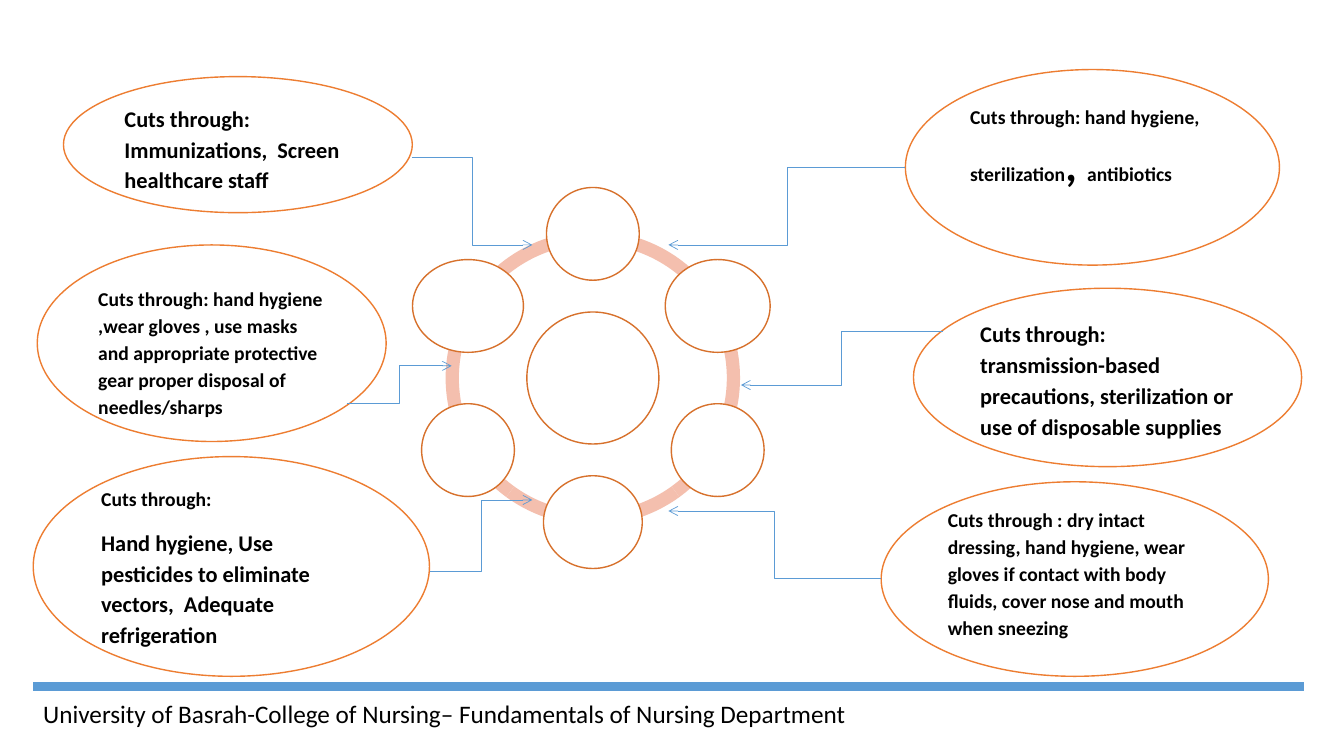
from math import cos, radians, sin

from lxml.etree import SubElement
from pptx import Presentation
from pptx.dml.color import RGBColor
from pptx.enum.shapes import MSO_CONNECTOR, MSO_SHAPE
from pptx.enum.text import MSO_ANCHOR, PP_ALIGN
from pptx.oxml.ns import qn
from pptx.util import Inches, Pt

WHITE = RGBColor(0xFF, 0xFF, 0xFF)
BLACK = RGBColor(0x00, 0x00, 0x00)
BLUE = RGBColor(0x5B, 0x9B, 0xD5)
ORANGE = RGBColor(0xED, 0x7D, 0x31)
DARK_ORANGE = RGBColor(0xD7, 0x71, 0x2C)
SALMON = RGBColor(0xF4, 0xBF, 0xAE)

FONT = "Calibri"
INSCRIBED_MARGIN = 0.1464

BARRIERS = [
    ((8.98, 0.69, 3.71, 1.94), 1.01,
     [[("Cuts through: hand hygiene,  sterilization", 14), (", ", 32),
       ("antibiotics", 14)]],
     (8.98, 1.66), (6.63, 2.43)),
    ((9.06, 2.86, 3.85, 1.77), 3.1,
     [[("Cuts through:", 16), (" ", 18),
       ("transmission-based precautions, sterilization or use of disposable supplies", 16)]],
     (9.35, 3.29), (7.35, 3.82)),
    ((8.74, 4.78, 3.84, 1.93), 5.0,
     [[("Cuts through : dry intact dressing, hand hygiene, wear gloves if contact "
        "with body fluids, cover nose and mouth when sneezing", 14)]],
     (8.74, 5.74), (6.63, 5.07)),
    ((0.33, 4.53, 3.93, 2.18), 4.8,
     [[("Cuts through:", 14)],
      [("Hand hygiene, Use pesticides to eliminate vectors,  Adequate refrigeration", 16)]],
     (4.26, 5.67), (5.28, 4.96)),
    ((0.37, 2.43, 3.46, 1.95), 2.81,
     [[("Cuts through: hand hygiene ,wear gloves , use masks and appropriate "
        "protective gear proper disposal of needles/sharps", 14)]],
     (3.44, 4.0), (4.48, 3.63)),
    ((0.63, 0.76, 3.46, 1.35), 1.0,
     [[("Cuts through: Immunizations,  Screen healthcare staff", 16)]],
     (4.09, 1.56), (5.28, 2.43)),
]


def set_attributes(target, values):
    for name, value in values.items():
        setattr(target, name, value)


def add_run(paragraph, text, size, bold):
    run = paragraph.add_run()
    run.text = text
    set_attributes(run.font, {"name": FONT, "size": Pt(size), "bold": bold})
    run.font.color.rgb = BLACK


def add_filled_shape(shapes, kind, box, fill, outline=None):
    shape = shapes.add_shape(kind, *map(Inches, box))
    shape.shadow.inherit = False
    shape.fill.solid()
    shape.fill.fore_color.rgb = fill
    if outline is None:
        shape.line.fill.background()
    else:
        shape.line.color.rgb = outline
        shape.line.width = Pt(1)
    return shape


def add_line(slide, kind, start, end, width):
    connector = slide.shapes.add_connector(kind, *map(Inches, start + end))
    connector.line.color.rgb = BLUE
    connector.line.width = Pt(width)
    properties = connector._element.spPr
    SubElement(properties, qn("a:effectLst"))
    return connector


def add_arrow(slide, start, end):
    connector = add_line(slide, MSO_CONNECTOR.ELBOW, start, end, 0.5)
    SubElement(connector.line._get_or_add_ln(), qn("a:tailEnd"), type="arrow")


def add_footer(slide, box):
    left, top, width, height = box
    add_line(slide, MSO_CONNECTOR.STRAIGHT, (left + 12.6, top), (left, top), 6)
    text_box = slide.shapes.add_textbox(
        *map(Inches, (left, top + 0.07, width, height)))
    text_box.text_frame.word_wrap = True
    add_run(text_box.text_frame.paragraphs[0],
            "University of Basrah-College of Nursing– Fundamentals of Nursing Department",
            18, False)


def add_infection_ring(slide, box):
    left, top, size = box
    center_x, center_y = left + size / 2, top + size / 2
    shapes = slide.shapes.add_group_shape().shapes

    for start in range(18, 199, 36):
        end = 18 if start == 198 else start + 36
        arc = add_filled_shape(shapes, MSO_SHAPE.BLOCK_ARC,
                               (left, top, size, size), SALMON)
        for index, value in enumerate((start * 0.6, end * 0.6, 0.045)):
            arc.adjustments[index] = value

    def add_circle(x, y, width, height):
        add_filled_shape(shapes, MSO_SHAPE.OVAL,
                         (x - width / 2, y - height / 2, width, height),
                         WHITE, DARK_ORANGE)

    add_circle(center_x, center_y, 1.31, 1.31)
    radius = 1.43
    for index, width in enumerate((0.92, 1.04, 0.92, 0.98, 0.92, 1.1)):
        angle = radians(60 * index)
        add_circle(center_x + radius * sin(angle),
                   center_y - radius * cos(angle), width, 0.92)


def add_barrier(slide, box, text_top, paragraphs):
    top, height = box[1], box[3]
    ellipse = add_filled_shape(slide.shapes, MSO_SHAPE.OVAL, box, WHITE, ORANGE)
    frame = ellipse.text_frame
    set_attributes(frame, {
        "word_wrap": True,
        "vertical_anchor": MSO_ANCHOR.TOP,
        "margin_top": Inches(text_top - top - INSCRIBED_MARGIN * height),
        "margin_bottom": Inches(-0.2),
    })
    for index, runs in enumerate(paragraphs):
        paragraph = frame.add_paragraph() if index else frame.paragraphs[0]
        set_attributes(paragraph, {
            "alignment": PP_ALIGN.LEFT,
            "line_spacing": 1.15,
            "space_after": Pt(10),
        })
        for text, size in runs:
            add_run(paragraph, text, size, True)


def main():
    presentation = Presentation()
    presentation.slide_width = Inches(13.33)
    presentation.slide_height = Inches(7.5)
    slide = presentation.slides.add_slide(presentation.slide_layouts[6])
    add_footer(slide, (0.33, 6.81, 8.65, 0.4))
    add_infection_ring(slide, (4.42, 2.29, 2.92))
    for box, text_top, paragraphs, start, end in BARRIERS:
        add_barrier(slide, box, text_top, paragraphs)
    for box, text_top, paragraphs, start, end in BARRIERS:
        add_arrow(slide, start, end)
    presentation.save("out.pptx")


if __name__ == "__main__":
    main()
